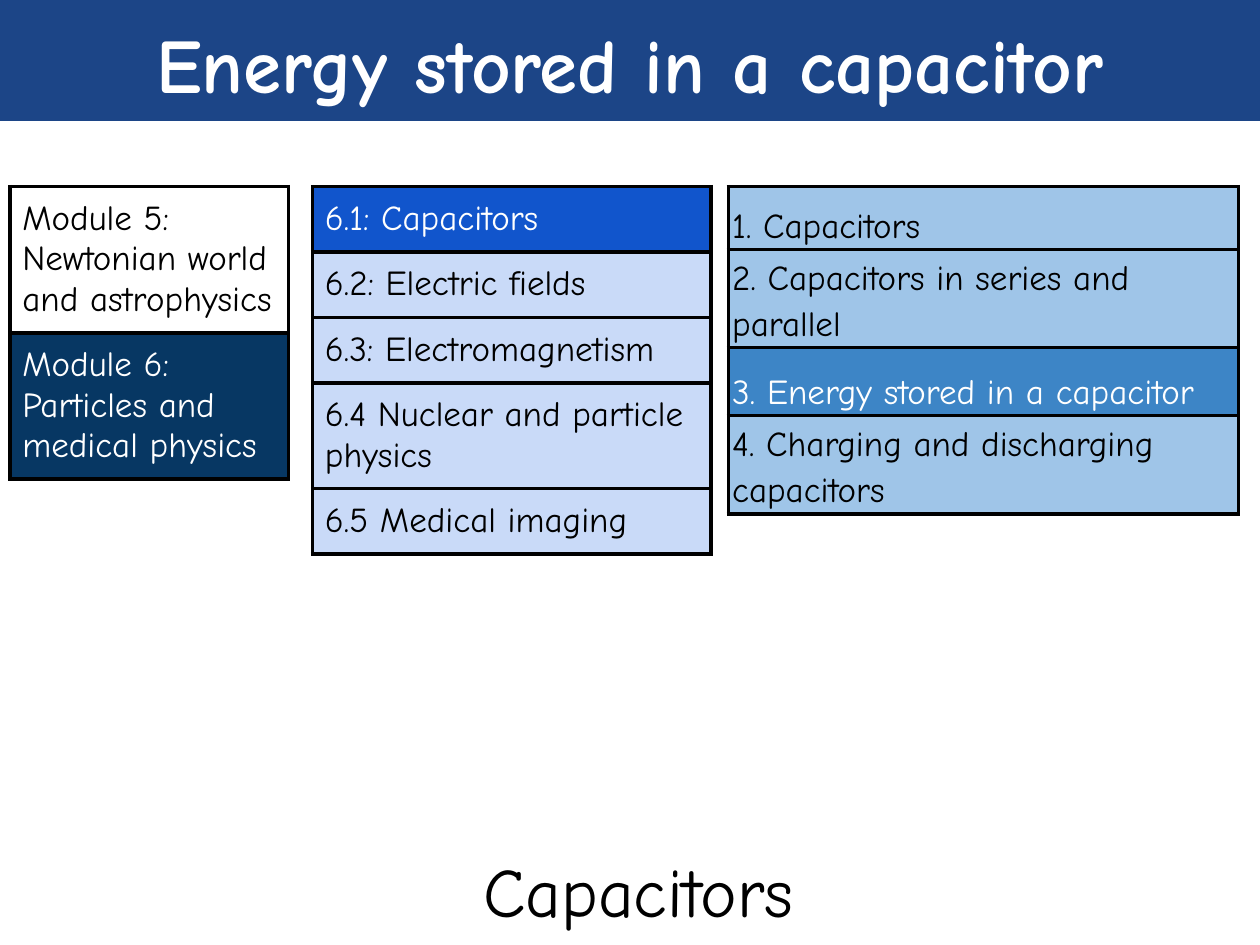
from lxml import etree
from pptx import Presentation
from pptx.dml.color import RGBColor
from pptx.enum.text import MSO_ANCHOR, MSO_AUTO_SIZE, PP_ALIGN
from pptx.oxml.ns import qn
from pptx.util import Cm, Pt

CENTER, LEFT = PP_ALIGN.CENTER, PP_ALIGN.LEFT
TOP, MIDDLE, BOTTOM = MSO_ANCHOR.TOP, MSO_ANCHOR.MIDDLE, MSO_ANCHOR.BOTTOM
NO_AUTOFIT = MSO_AUTO_SIZE.NONE

BLACK = RGBColor(0x00, 0x00, 0x00)
WHITE = RGBColor(0xFF, 0xFF, 0xFF)
BANNER_BLUE = RGBColor(0x1C, 0x45, 0x87)
NAVY = RGBColor(0x07, 0x37, 0x63)
ROYAL_BLUE = RGBColor(0x11, 0x55, 0xCC)
PALE_BLUE = RGBColor(0xC9, 0xDA, 0xF8)
MID_BLUE = RGBColor(0x3D, 0x85, 0xC6)
SKY_BLUE = RGBColor(0x9F, 0xC5, 0xE8)

FONT = "Comic Neue"
TABLE_TOP = 3.76
BORDER_WIDTH = Pt(2.25)

MODULES = [
    ("Module 5: Newtonian world and astrophysics", 2.95),
    ("Module 6: Particles and medical physics", 2.95),
]
CHAPTERS = [
    ("6.1: Capacitors", 1.32),
    ("6.2: Electric fields", 1.32),
    ("6.3: Electromagnetism", 1.32),
    ("6.4 Nuclear and particle physics", 2.13),
    ("6.5 Medical imaging", 1.32),
]
LESSONS = [
    ("1. Capacitors", 1.27),
    ("2. Capacitors in series and parallel", 1.98),
    ("3. Energy stored in a capacitor", 1.37),
    ("4. Charging and discharging capacitors", 1.98),
]


def write_text(frame, text, size=20, color=BLACK, bold=False, align=LEFT, spacing=1.0):
    para = frame.paragraphs[0]
    para.alignment = align
    para.line_spacing = spacing
    para.space_before = Pt(0)
    span = para.add_run()
    span.text = text
    span.font.name = FONT
    span.font.size = Pt(size)
    span.font.bold = bold
    span.font.color.rgb = color


def set_margins(box, side, end):
    box.margin_left = box.margin_right = Cm(side)
    box.margin_top = box.margin_bottom = Cm(end)


def add_borders(cell):
    properties = cell._tc.get_or_add_tcPr()
    for index, edge in enumerate(("a:lnL", "a:lnR", "a:lnT", "a:lnB")):
        line = etree.Element(qn(edge), w=str(BORDER_WIDTH))
        fill = etree.SubElement(line, qn("a:solidFill"))
        etree.SubElement(fill, qn("a:srgbClr"), val=str(BLACK))
        properties.insert(index, line)


def add_topic_table(slide, left, width, topics, current, fill, current_fill,
                    margins=(0.25, 0.25), anchor=TOP, spacing=1.0):
    height = sum(row_height for _, row_height in topics)
    table = slide.shapes.add_table(
        len(topics), 1, Cm(left), Cm(TABLE_TOP), Cm(width), Cm(height)
    ).table
    table.first_row = False
    table.horz_banding = False
    for index, (topic, row_height) in enumerate(topics):
        is_current = index == current
        table.rows[index].height = Cm(row_height)
        cell = table.cell(index, 0)
        cell.fill.solid()
        cell.fill.fore_color.rgb = current_fill if is_current else fill
        cell.vertical_anchor = anchor
        set_margins(cell, *margins)
        add_borders(cell)
        write_text(cell.text_frame, topic, spacing=spacing,
                   color=WHITE if is_current else BLACK)


def fill_placeholder(box, text, bounds, fill, end_margin, anchor, opacity=100, **text_format):
    box.left, box.top, box.width, box.height = (Cm(length) for length in bounds)
    box.fill.solid()
    box.fill.fore_color.rgb = fill
    if opacity < 100:
        color = box.fill._xPr.find(qn("a:solidFill"))[0]
        etree.SubElement(color, qn("a:alpha"), val=str(opacity * 1000))
    frame = box.text_frame
    frame.word_wrap = True
    frame.auto_size = NO_AUTOFIT
    frame.vertical_anchor = anchor
    set_margins(frame, 0.25, end_margin)
    write_text(frame, text, align=CENTER, **text_format)


def main():
    deck = Presentation()
    deck.slide_width, deck.slide_height = Cm(25.4), Cm(19.05)
    page = deck.slides.add_slide(deck.slide_layouts[0])
    title, subtitle = page.placeholders

    add_topic_table(page, 0.2, 5.61, MODULES, 1, WHITE, NAVY)
    add_topic_table(page, 6.3, 8.03, CHAPTERS, 0, PALE_BLUE, ROYAL_BLUE)
    add_topic_table(page, 14.68, 10.29, LESSONS, 2, SKY_BLUE, MID_BLUE,
                    margins=(0.08, 0.05), anchor=BOTTOM, spacing=1.15)

    fill_placeholder(subtitle, "Capacitors", (5.77, 17.15, 14.2, 1.57), WHITE,
                     0.13, MIDDLE, opacity=59, size=39.6)
    fill_placeholder(title, "Energy stored in a capacitor", (0, 0, 25.4, 2.44),
                     BANNER_BLUE, 0.25, BOTTOM, size=44, color=WHITE, bold=True)

    deck.save("out.pptx")


if __name__ == "__main__":
    main()
